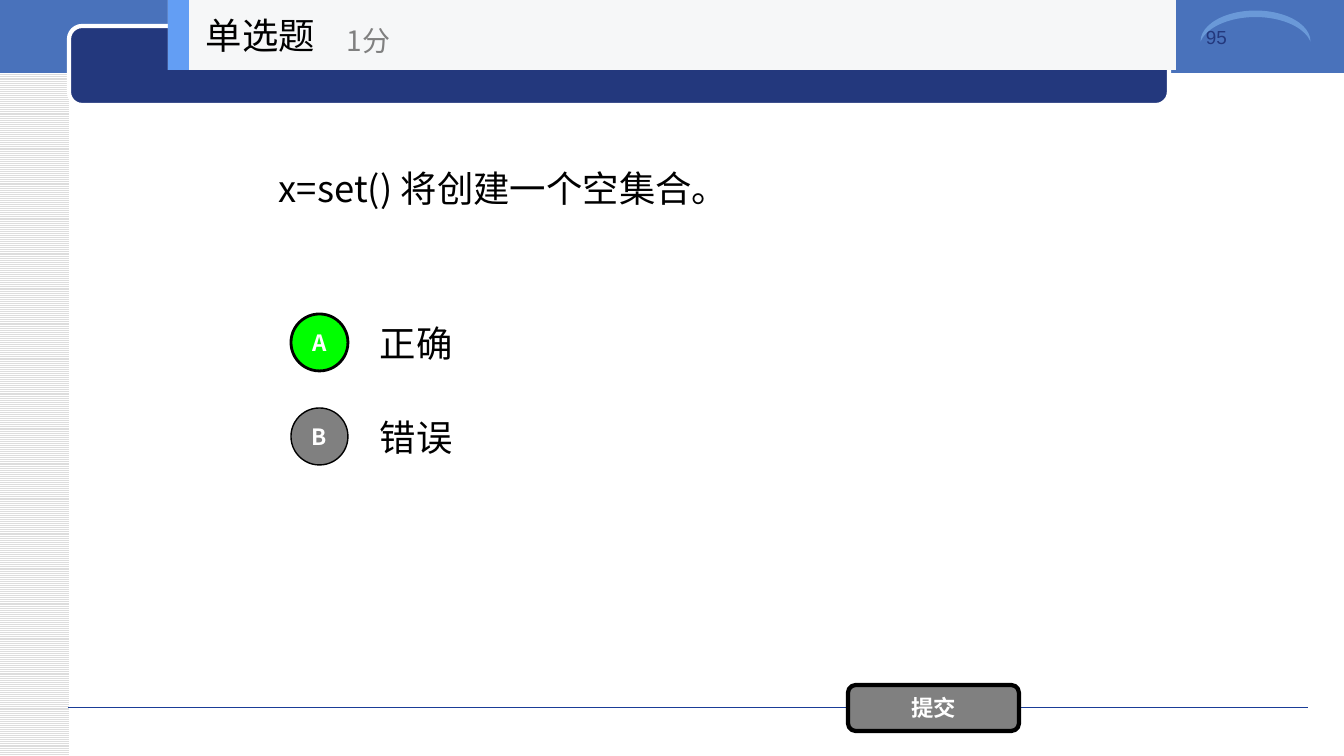
from pptx import Presentation
from pptx.dml.color import RGBColor
from pptx.enum.dml import MSO_PATTERN
from pptx.enum.shapes import MSO_CONNECTOR, MSO_SHAPE
from pptx.enum.text import MSO_ANCHOR, PP_ALIGN
from pptx.oxml.ns import qn
from pptx.util import Pt
from lxml import etree

PX = 914400 / 100.8
RECT, ROUND = MSO_SHAPE.RECTANGLE, MSO_SHAPE.ROUNDED_RECTANGLE
OVAL, MOON = MSO_SHAPE.OVAL, MSO_SHAPE.MOON
STRAIGHT = MSO_CONNECTOR.STRAIGHT
HATCH = MSO_PATTERN.LIGHT_HORIZONTAL
TOP, MIDDLE = MSO_ANCHOR.TOP, MSO_ANCHOR.MIDDLE
LEFT, CENTER = PP_ALIGN.LEFT, PP_ALIGN.CENTER

BLACK = RGBColor(0x00, 0x00, 0x00)
WHITE = RGBColor(0xFF, 0xFF, 0xFF)
GRAY = RGBColor(0x80, 0x80, 0x80)
GREEN = RGBColor(0x00, 0xFF, 0x00)
HATCH_GRAY = RGBColor(0xDD, 0xDD, 0xDD)
BAND_BLUE = RGBColor(0x49, 0x72, 0xBB)
RULE_BLUE = RGBColor(0x1A, 0x3D, 0x97)
NAVY = RGBColor(0x23, 0x38, 0x7D)
MOON_BLUE = RGBColor(0x6A, 0x99, 0xD8)
BAR_GRAY = RGBColor(0xF6, 0xF7, 0xF8)
ACCENT_BLUE = RGBColor(0x63, 0x9E, 0xF4)

SANS = "Noto Sans CJK SC"
BODY = {"size": Pt(26), "name": SANS, "color": BLACK}
POINTS = {"size": Pt(20), "name": SANS, "color": GRAY}
BUTTON = {"size": Pt(16), "name": SANS, "color": WHITE, "bold": True}
NUMBER = {"size": Pt(13.5), "name": "Arial", "color": NAVY}


def emu(*lengths):
    return [round(n * PX) for n in lengths]


def write(sp, text, fmt, anchor=MIDDLE, align=LEFT):
    tf = sp.text_frame
    tf.word_wrap = True
    tf.vertical_anchor = anchor
    p = tf.paragraphs[0]
    p.alignment = align
    r = p.add_run()
    r.text = text
    for key, value in fmt.items():
        if key == "color":
            r.font.color.rgb = value
        else:
            setattr(r.font, key, value)
    # East Asian glyphs need their own typeface entry
    ea = etree.SubElement(r.font._element, qn("a:ea"))
    ea.set("typeface", fmt["name"])


def add_text(s, box, text, fmt, anchor=MIDDLE):
    write(s.shapes.add_textbox(*emu(*box)), text, fmt, anchor)


def add_box(s, kind, box, fill, line=None, width=1):
    sp = s.shapes.add_shape(kind, *emu(*box))
    sp.shadow.inherit = False
    sp.fill.solid()
    sp.fill.fore_color.rgb = fill
    if line is None:
        sp.line.fill.background()
    else:
        sp.line.color.rgb = line
        sp.line.width = Pt(width)
    return sp


def add_button(s, kind, box, text, fill, width):
    sp = add_box(s, kind, box, fill, BLACK, width)
    tf = sp.text_frame
    for side in ("left", "right", "top", "bottom"):
        setattr(tf, f"margin_{side}", 0)
    write(sp, text, BUTTON, align=CENTER)


def draw_frame(s, x, y, w, h):
    # Hatched strip and top band
    strip = add_box(s, RECT, (x, y, 69, h), WHITE)
    strip.fill.patterned()
    strip.fill.pattern = HATCH
    strip.fill.fore_color.rgb = HATCH_GRAY
    strip.fill.back_color.rgb = WHITE
    add_box(s, RECT, (x, y, w, 73), BAND_BLUE)

    # Footer rule
    rule = s.shapes.add_connector(STRAIGHT, *emu(x + 68, y + 707, x + 1308, y + 707))
    rule.line.color.rgb = RULE_BLUE
    rule.line.width = Pt(0.5)
    etree.SubElement(rule._element.spPr, qn("a:effectLst"))

    # Title plate, arc and slide number
    add_box(s, ROUND, (x + 69, y + 26, 1100, 79), NAVY, WHITE, 3)
    moon = add_box(s, MOON, (x + 1240, y - 29, 31, 110), MOON_BLUE)
    moon.rotation = 90
    moon.adjustments[0] = 0.21
    add_text(s, (x + 1196, y + 21, 122, 72), "95", NUMBER, TOP)


def draw_heading(s, x, y, w, h):
    add_box(s, RECT, (x, y, w, h), BAR_GRAY)
    add_box(s, RECT, (x, y, 21, h), ACCENT_BLUE)
    add_text(s, (x + 28, y, 210, h), "单选题", BODY)
    add_text(s, (x + 169, y + 12, 252, 56), "1分", POINTS)


def draw_question(s, x, y, w, h):
    add_text(s, (x, y, w, h), "x=set() 将创建一个空集合。", BODY)


def draw_options(s, x, y, w, pitch):
    options = [("A", "正确", GREEN, 2), ("B", "错误", GRAY, 1)]
    for i, (letter, text, fill, width) in enumerate(options):
        top = y + i * pitch
        add_text(s, (x + 79, top - 7, w - 79, 71), text, BODY)
        add_button(s, OVAL, (x, top, 57, 57), letter, fill, width)


def main():
    prs = Presentation()
    prs.slide_width, prs.slide_height = emu(1344, 756)
    s = prs.slides.add_slide(prs.slide_layouts[6])
    draw_frame(s, 0, 0, 1344, 756)
    draw_question(s, 269, 70, 806, 236)
    draw_options(s, 291, 314, 785, 94)
    add_button(s, ROUND, (848, 685, 171, 46), "提交", GRAY, 3)
    draw_heading(s, 168, 0, 1008, 70)
    prs.save("out.pptx")


if __name__ == "__main__":
    main()
